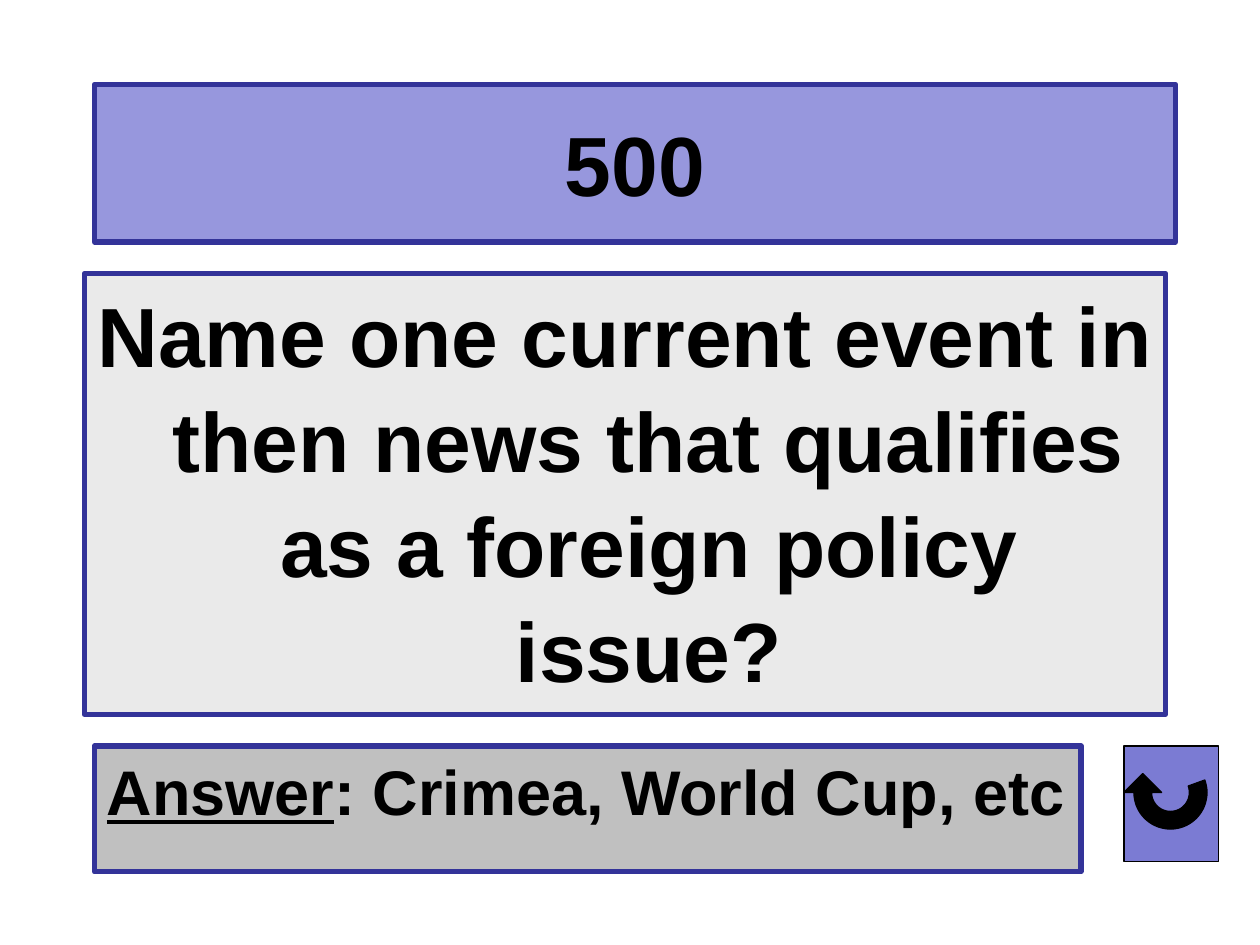
from math import cos, radians, sin

from pptx import Presentation
from pptx.dml.color import RGBColor
from pptx.enum.shapes import MSO_SHAPE
from pptx.enum.text import MSO_ANCHOR, PP_ALIGN
from pptx.util import Inches, Pt


def rgb(hex_color):
    return RGBColor.from_string(hex_color)


class QuizSlide:
    font = "Arial"
    ink = "000000"
    frame = "333399"

    def __init__(self, presentation):
        self.slide = presentation.slides.add_slide(presentation.slide_layouts[6])

    def paint(self, shape, fill, line, width):
        shape.shadow.inherit = False
        shape.fill.solid()
        shape.fill.fore_color.rgb = rgb(fill)
        shape.line.color.rgb = rgb(line)
        shape.line.width = Pt(width)
        return shape

    def box(self, left, top, width, height, fill, line=frame, line_width=3):
        shape = self.slide.shapes.add_shape(
            MSO_SHAPE.RECTANGLE, *map(Inches, (left, top, width, height)))
        return self.paint(shape, fill, line, line_width)

    def text(self, box, parts, size, align=PP_ALIGN.CENTER,
             anchor=MSO_ANCHOR.TOP, before=0):
        """Write one bold paragraph from (words, underlined) parts."""
        frame = box.text_frame
        frame.word_wrap = True
        frame.vertical_anchor = anchor
        paragraph = frame.paragraphs[0]
        paragraph.alignment = align
        paragraph.space_before = Pt(before)
        font = paragraph.font
        font.name, font.size, font.bold = self.font, Pt(size), True
        font.color.rgb = rgb(self.ink)
        for words, underlined in parts:
            run = paragraph.add_run()
            run.text = words
            if underlined:
                run.font.underline = True
        return paragraph

    def hang(self, paragraph, indent):
        properties = paragraph._p.get_or_add_pPr()
        properties.set("marL", str(Inches(indent)))
        properties.set("indent", str(-Inches(indent)))

    def return_arrow(self, x, y, outer, inner):
        """Draw a U-turn arrow around (x, y), its head pointing up at the left."""
        def arc(radius, angles):
            return [(x + radius * cos(radians(a)), y + radius * sin(radians(a)))
                    for a in angles]

        middle = (outer + inner) / 2
        half_head = inner
        head = [(x - middle - half_head, y), (x - middle, y - half_head),
                (x - middle + half_head, y)]
        points = (arc(inner, range(180, -21, -5)) +
                  arc(outer, range(-20, 181, 5)) + head)
        builder = self.slide.shapes.build_freeform(
            *(Inches(v) for v in points[0]), scale=1.0)
        builder.add_line_segments(
            [(Inches(px), Inches(py)) for px, py in points[1:]], close=True)
        self.paint(builder.convert_to_shape(), self.ink, self.ink, 0.75)


def main():
    presentation = Presentation()
    presentation.slide_width, presentation.slide_height = Inches(10), Inches(7.5)
    quiz = QuizSlide(presentation)

    # Answer
    answer = quiz.box(0.75, 5.92, 7.83, 1, "C0C0C0")
    quiz.text(answer, [("Answer", True), (": Crimea, World Cup, etc", False)],
              36, align=PP_ALIGN.LEFT, before=3.5)

    # Points
    points = quiz.box(0.75, 0.67, 8.58, 1.25, "9797DD")
    quiz.text(points, [("500", False)], 48, anchor=MSO_ANCHOR.MIDDLE)

    # Question
    question = quiz.box(0.67, 2.17, 8.58, 3.5, "EAEAEA")
    wording = quiz.text(question, [(
        "Name one current event in then news that qualifies "
        "as a foreign policy issue?", False)], 48, before=2)
    wording.line_spacing = 1.04
    quiz.hang(wording, 0.38)

    # Return button
    quiz.box(8.92, 5.92, 0.75, 0.92, "7B7BD3", line=quiz.ink, line_width=0.75)
    quiz.return_arrow(9.29, 6.29, outer=0.29, inner=0.15)

    presentation.save("out.pptx")


if __name__ == "__main__":
    main()
